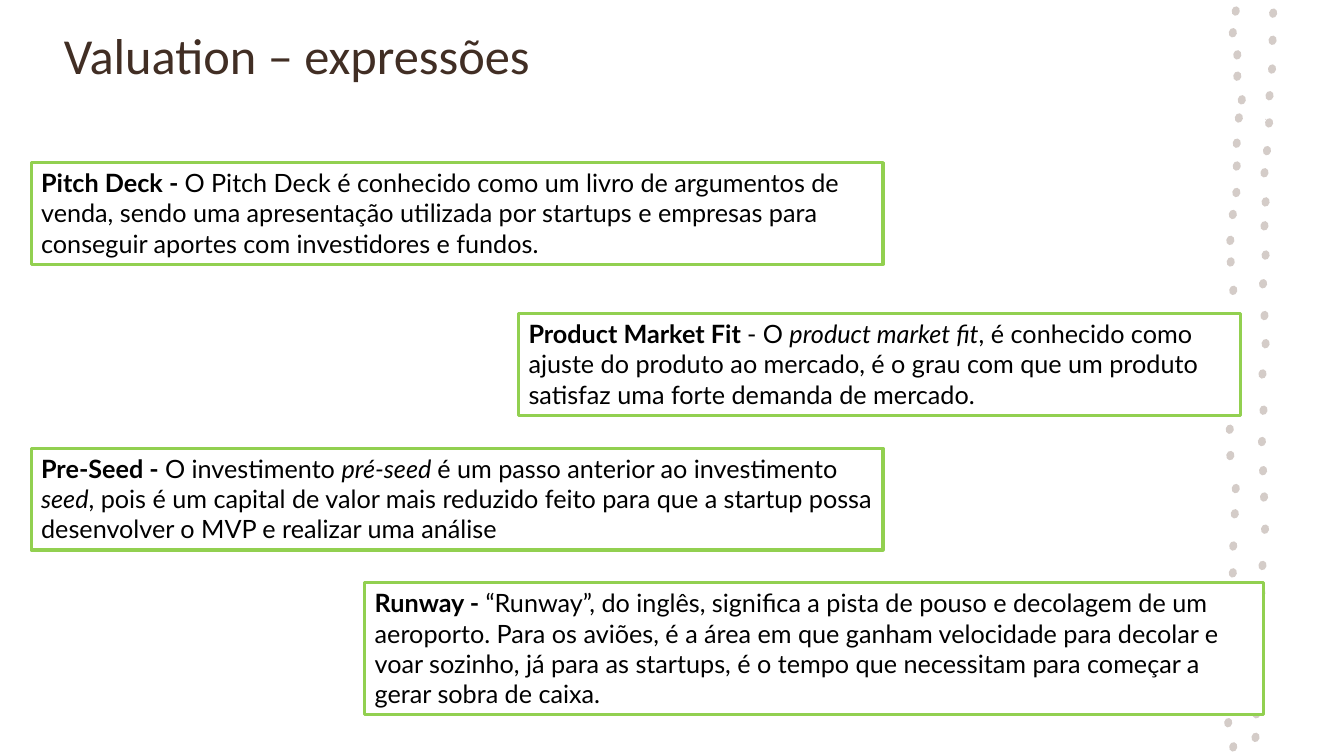
"""Builds the slide of valuation terms with its dotted border."""
import math

import pptx
import pptx.dml.color
import pptx.enum.shapes
import pptx.enum.text
import pptx.util

Pt = pptx.util.Pt
RGBColor = pptx.dml.color.RGBColor

WHITE = RGBColor(0xFF, 0xFF, 0xFF)
BLACK = RGBColor(0x00, 0x00, 0x00)
BROWN = RGBColor(0x41, 0x2E, 0x24)
GREEN = RGBColor(0x92, 0xD0, 0x50)
TAUPE = RGBColor(0xD4, 0xCC, 0xC8)

DOT_TILT, DOT_CORNERS = 0.2, 8

DOT_CENTERS = [
    (909.4, 9.4), (909, 28.8), (908.6, 49.3), (906.8, 68.4), (906.5, 87.8),
    (905, 107.6), (903.2, 123.4), (904, 144.2), (903.2, 161.3), (904, 182.2),
    (902.2, 202.7), (903.2, 225.4), (904, 245.5), (901.8, 267.1), (902.5, 293),
    (901.4, 315.4), (902.2, 336.2), (902.9, 355), (903.6, 378), (901.8, 403.9),
    (901, 423.4), (899.6, 449.3), (899.3, 489.6), (897.5, 509.8), (896.8, 526.7),
    (882.7, 7.9), (880.6, 23.4), (883.8, 39.2), (883.8, 54.4), (887, 71.3),
    (884.9, 84.3), (883.4, 102.3), (883.4, 118.6), (883.1, 137.5), (880.6, 153.2),
    (878.8, 171.7), (879.1, 187.1), (880.9, 207.4), (880.6, 226.8), (878.4, 306.6),
    (878.8, 325.4), (882.7, 349), (882, 367), (880.9, 390), (880.6, 409.2),
    (877.3, 516.2), (880.9, 533.5),
]
SPECK_CENTER = (904, 85.2)

TERMS = [
    ((22.3, 116.1, 608.4, 72.7), [
        ("Pitch Deck - ", "bold"),
        ("O Pitch Deck é conhecido como um livro de argumentos de venda, sendo uma "
         "apresentação utilizada por startups e empresas para conseguir aportes com "
         "investidores e fundos.", ""),
    ]),
    ((22.3, 320.2, 608.4, 72.7), [
        ("Pre-Seed - ", "bold"),
        ("O investimento ", ""),
        ("pré-seed ", "italic"),
        ("é um passo anterior ao investimento ", ""),
        ("seed", "italic"),
        (", pois é um capital de valor mais reduzido feito para que a startup possa "
         "desenvolver o MVP e realizar uma análise", ""),
    ]),
    ((370.5, 224, 515.5, 72.7), [
        ("Product Market Fit ", "bold"),
        ("- O ", ""),
        ("product market fit", "italic"),
        (", é conhecido como ajuste do produto ao mercado, é o grau com que um "
         "produto satisfaz uma forte demanda de mercado.", ""),
    ]),
    ((260.6, 416.2, 642.2, 94.5), [
        ("Runway - ", "bold"),
        ("“Runway”, do inglês, significa a pista de pouso e decolagem de um aeroporto. "
         "Para os aviões, é a área em que ganham velocidade para decolar e voar "
         "sozinho, já para as startups, é o tempo que necessitam para começar a "
         "gerar sobra de caixa.", ""),
    ]),
]


def add_span(para, text, font="Lato", size=18, color=BLACK, bold=False, italic=False):
    """Append one formatted span to a paragraph."""
    span = para.add_run()
    span.text = text
    span.font.name = font
    span.font.size = Pt(size)
    span.font.color.rgb = color
    span.font.bold = bold
    span.font.italic = italic


def add_dot(page, center_x, center_y, width=5.8, height=6.8):
    """Draw one tilted oval dot of the border."""
    corners = []
    for step in range(DOT_CORNERS):
        angle = 2 * math.pi * step / DOT_CORNERS
        across = width / 2 * math.cos(angle)
        down = height / 2 * math.sin(angle)
        x = center_x + across * math.cos(DOT_TILT) - down * math.sin(DOT_TILT)
        y = center_y + across * math.sin(DOT_TILT) + down * math.cos(DOT_TILT)
        corners.append((Pt(x), Pt(y)))
    outline = page.shapes.build_freeform(*corners[0])
    outline.add_line_segments(corners[1:], close=True)
    dot = outline.convert_to_shape()
    dot.shadow.inherit = False
    dot.fill.solid()
    dot.fill.fore_color.rgb = TAUPE
    dot.line.fill.background()


def add_title(page, text):
    """Write the slide heading."""
    box = page.shapes.add_textbox(Pt(38.5), Pt(11.2), Pt(758.9), Pt(54.7))
    frame = box.text_frame
    frame.word_wrap = True
    frame.vertical_anchor = pptx.enum.text.MSO_ANCHOR.MIDDLE
    add_span(frame.paragraphs[0], text, font="Calibri", size=36, color=BROWN)


def add_term(page, place, spans):
    """Draw a green-framed box that explains one term."""
    box = page.shapes.add_shape(
        pptx.enum.shapes.MSO_SHAPE.RECTANGLE, *[Pt(length) for length in place])
    box.shadow.inherit = False
    box.fill.solid()
    box.fill.fore_color.rgb = WHITE
    box.line.color.rgb = GREEN
    box.line.width = Pt(2.25)
    frame = box.text_frame
    frame.word_wrap = True
    frame.auto_size = pptx.enum.text.MSO_AUTO_SIZE.SHAPE_TO_FIT_TEXT
    frame.vertical_anchor = pptx.enum.text.MSO_ANCHOR.TOP
    para = frame.paragraphs[0]
    para.alignment = pptx.enum.text.PP_ALIGN.LEFT
    for text, style in spans:
        add_span(para, text, bold=style == "bold", italic=style == "italic")


def main():
    """Build and save the deck."""
    deck = pptx.Presentation()
    deck.slide_width, deck.slide_height = Pt(960), Pt(540)
    page = deck.slides.add_slide(deck.slide_layouts[6])
    for center in DOT_CENTERS:
        add_dot(page, *center)
    add_dot(page, *SPECK_CENTER, width=0.6, height=0.6)
    add_title(page, "Valuation – expressões")
    for place, spans in TERMS:
        add_term(page, place, spans)
    deck.save("out.pptx")


if __name__ == "__main__":
    main()
